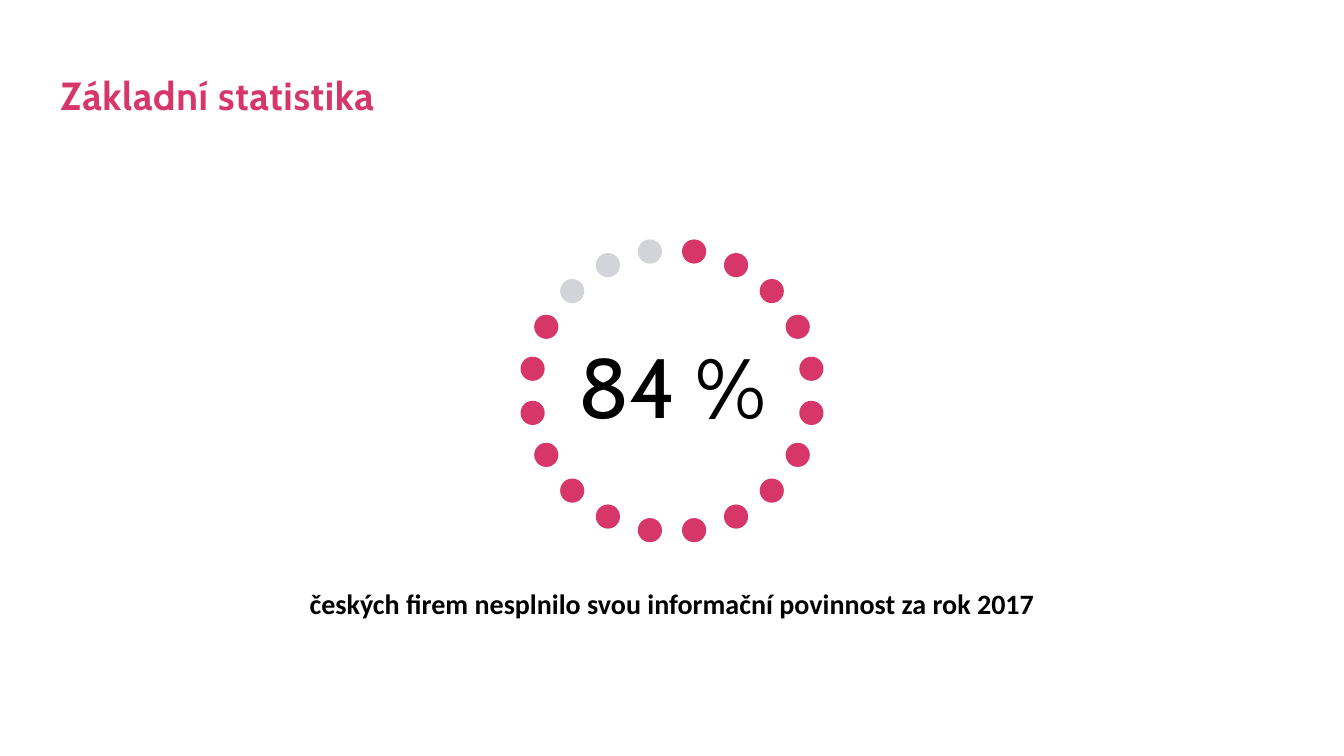
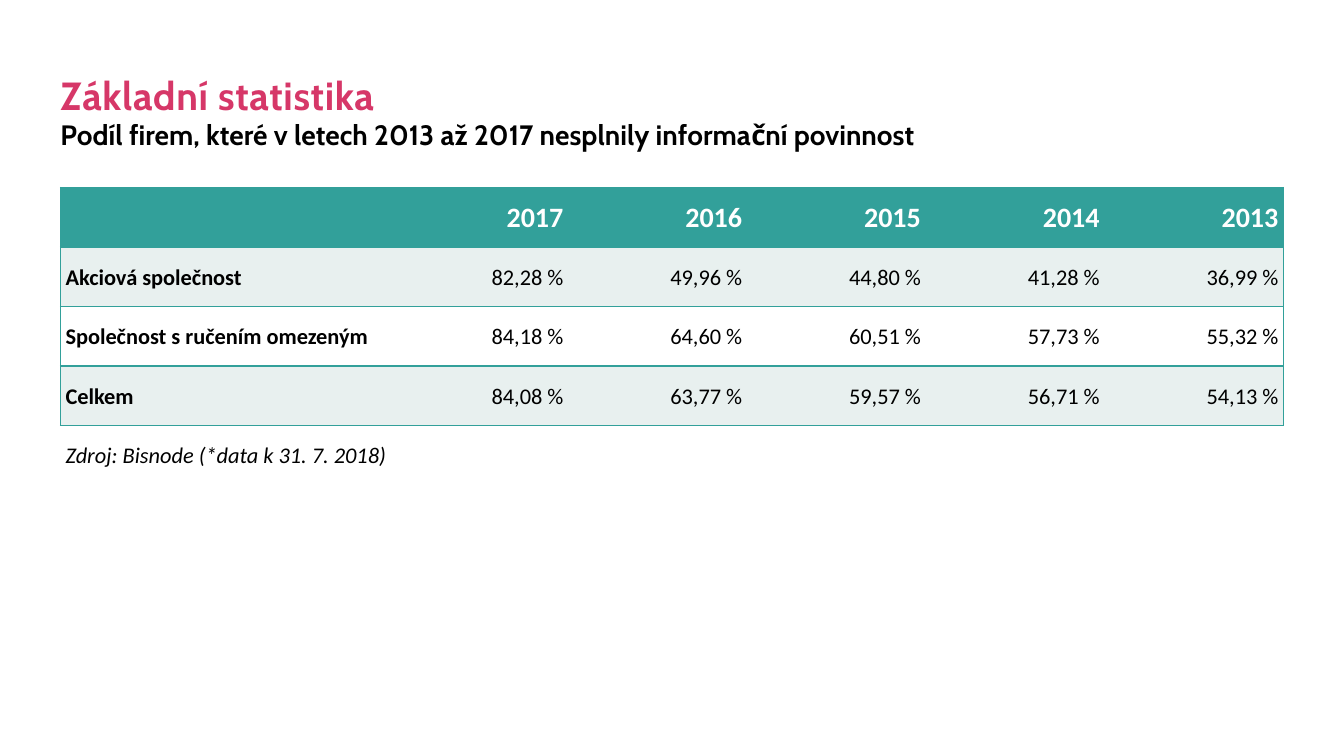
"""Builds two slides on Czech firms that failed their duty to publish accounts."""
from math import cos, radians, sin

from lxml.etree import SubElement
from pptx import Presentation
from pptx.dml.color import RGBColor
from pptx.enum.shapes import MSO_SHAPE as Shape
from pptx.enum.text import MSO_ANCHOR as Anchor, PP_ALIGN as Align
from pptx.oxml.ns import qn
from pptx.util import Inches, Pt

hex_color = RGBColor.from_string
PINK, GREY, TEAL, MINT = "D63768", "D2D4D9", "32A09A", "E8F0EF"
BLACK, WHITE = "000000", "FFFFFF"

deck = Presentation()
deck.slide_width, deck.slide_height = Inches(13.33), Inches(7.5)
COLUMN, ROW = deck.slide_width / 100, deck.slide_height / 100
LEFT, WIDTH = 4.5, 91


def write(frame, text, font, size, color=BLACK, bold=False, align=Align.LEFT, spacing=0.9):
    """Write one paragraph into a text frame and return its paragraph and span."""
    para = frame.paragraphs[0]
    para.alignment, para.line_spacing = align, spacing
    span = para.add_run()
    span.text = text
    span.font.name, span.font.size, span.font.bold = font, Pt(size), bold
    span.font.color.rgb = hex_color(color)
    return para, span


def add_frame(shapes, left, top, width, height, anchor=Anchor.TOP):
    """Add a text box, measured in grid columns and rows, without side margins."""
    box = shapes.add_textbox(int(left * COLUMN), int(top * ROW),
                             int(width * COLUMN), int(height * ROW))
    frame = box.text_frame
    frame.word_wrap, frame.vertical_anchor = True, anchor
    frame.margin_left = frame.margin_top = frame.margin_right = frame.margin_bottom = 0
    return frame


pages = [deck.slides.add_slide(deck.slide_layouts[6]) for _ in range(2)]
for page in pages:
    title = add_frame(page.shapes, LEFT, 10.13, WIDTH, 5.6, Anchor.BOTTOM)
    para, span = write(title, "Základní statistika", "Cabin", 28, PINK, True)
    span.font._element.set("spc", "50")
ring_page, table_page = pages

caption = add_frame(ring_page.shapes, 20.2, 76.67, 59.6, 5.07)
write(caption, "českých firem nesplnilo svou informační povinnost za rok 2017",
      "Calibri", 20, bold=True, align=Align.CENTER, spacing=1.2)

DOTS, FILLED = 20, 17
center_x, center_y = 50 * COLUMN, 51.7 * ROW
radius, dot_size = 10.5 * COLUMN, 1.8 * COLUMN
ring = ring_page.shapes.add_group_shape().shapes
share = add_frame(ring, 38.75, 31.7, 22.5, 40, Anchor.MIDDLE)
write(share, "84 %", "Cabin", 60, align=Align.CENTER)
for number in range(DOTS):
    angle = radians(360 / DOTS * (number + 0.5))
    dot = ring.add_shape(Shape.OVAL,
                         int(center_x + radius * sin(angle) - dot_size / 2),
                         int(center_y - radius * cos(angle) - dot_size / 2),
                         int(dot_size), int(dot_size))
    dot.shadow.inherit = False
    dot.fill.solid()
    dot.fill.fore_color.rgb = hex_color(PINK if number < FILLED else GREY)
    dot.line.fill.background()

subtitle = add_frame(table_page.shapes, LEFT, 15.73, WIDTH, 4.13)
subtitle.margin_top = Inches(0.02)
write(subtitle, "Podíl firem, které v letech 2013 až 2017 nesplnily informační povinnost",
      "Cabin", 20, bold=True)

rows = [
    ["", "2017", "2016", "2015", "2014", "2013"],
    ["Akciová společnost", "82,28 %", "49,96 %", "44,80 %", "41,28 %", "36,99 %"],
    ["Společnost s ručením omezeným", "84,18 %", "64,60 %", "60,51 %", "57,73 %", "55,32 %"],
    ["Celkem", "84,08 %", "63,77 %", "59,57 %", "56,71 %", "54,13 %"],
    ["Zdroj: Bisnode (*data k 31. 7. 2018)", "", "", "", "", ""],
]
source_row, last_column = len(rows) - 1, len(rows[0]) - 1
fills = [TEAL, MINT, WHITE, MINT, WHITE]
label_width, year_width, row_height = 24.5, 13.3, 7.87

table = table_page.shapes.add_table(
    len(rows), len(rows[0]), int(LEFT * COLUMN), int(24.8 * ROW),
    int(WIDTH * COLUMN), int(row_height * len(rows) * ROW)).table
table.first_row = table.horz_banding = False
for index, column in enumerate(table.columns):
    column.width = int((year_width if index else label_width) * COLUMN)

for r, texts in enumerate(rows):
    table.rows[r].height = int(row_height * ROW)
    for c, text in enumerate(texts):
        cell = table.cell(r, c)
        cell.vertical_anchor = Anchor.MIDDLE
        cell.margin_left = cell.margin_right = Inches(0.05)
        cell.margin_top = cell.margin_bottom = 0
        in_grid = r < source_row
        edges = {"a:lnL": in_grid and c == 0, "a:lnR": in_grid and c == last_column,
                 "a:lnT": True, "a:lnB": in_grid}
        properties = cell._tc.get_or_add_tcPr()
        for tag, visible in edges.items():
            edge = SubElement(properties, qn(tag), w=str(Pt(1)))
            if visible:
                SubElement(SubElement(edge, qn("a:solidFill")), qn("a:srgbClr"), val=TEAL)
            else:
                SubElement(edge, qn("a:noFill"))
        cell.fill.solid()
        cell.fill.fore_color.rgb = hex_color(fills[r])
        if text:
            para, span = write(cell.text_frame, text, "Calibri", 16 if r else 20,
                               BLACK if r else WHITE, in_grid and (r == 0 or c == 0),
                               Align.RIGHT if c else Align.LEFT, 1.07)
            span.font.italic = not in_grid
table.cell(source_row, 0).merge(table.cell(source_row, last_column))

deck.save("out.pptx")
